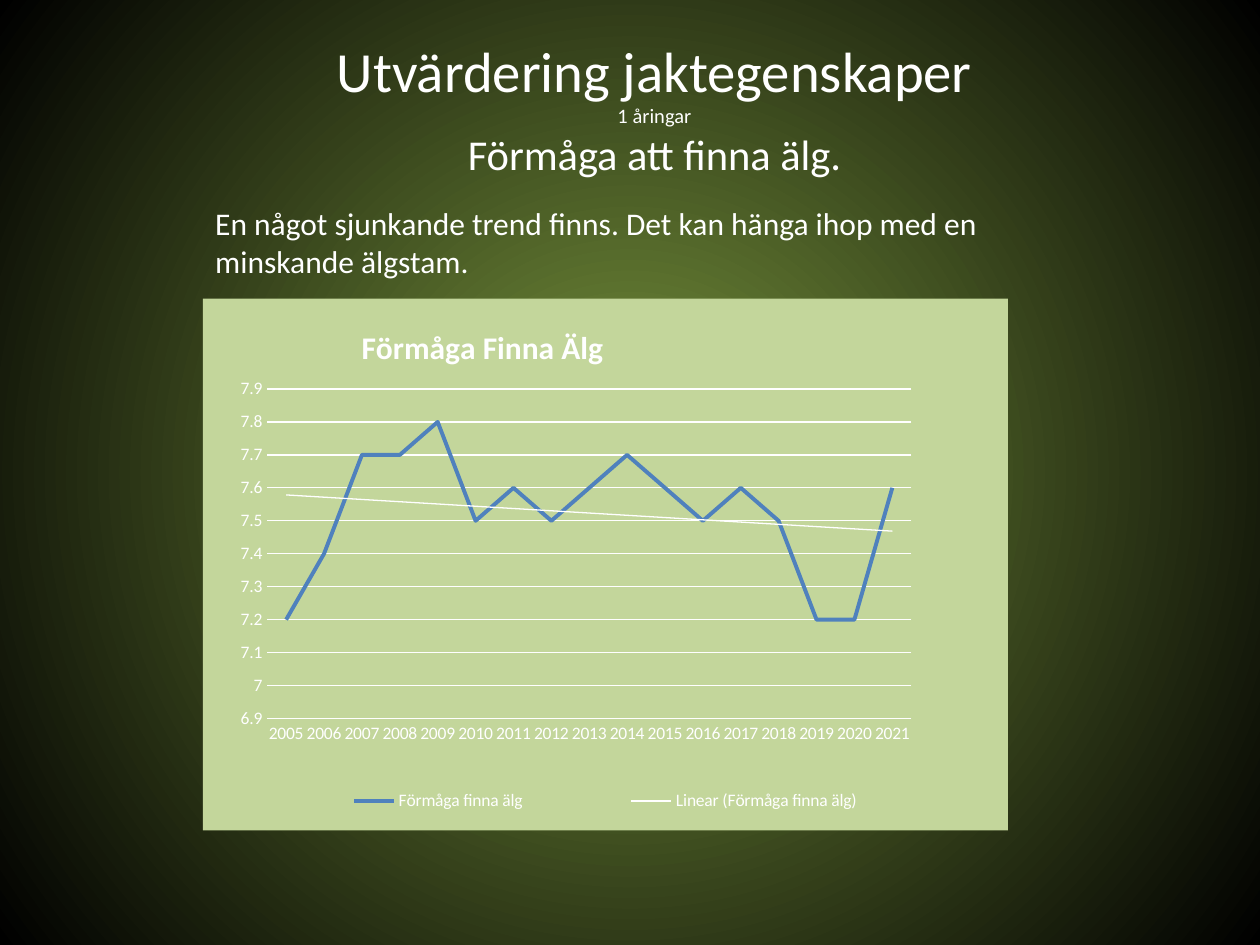
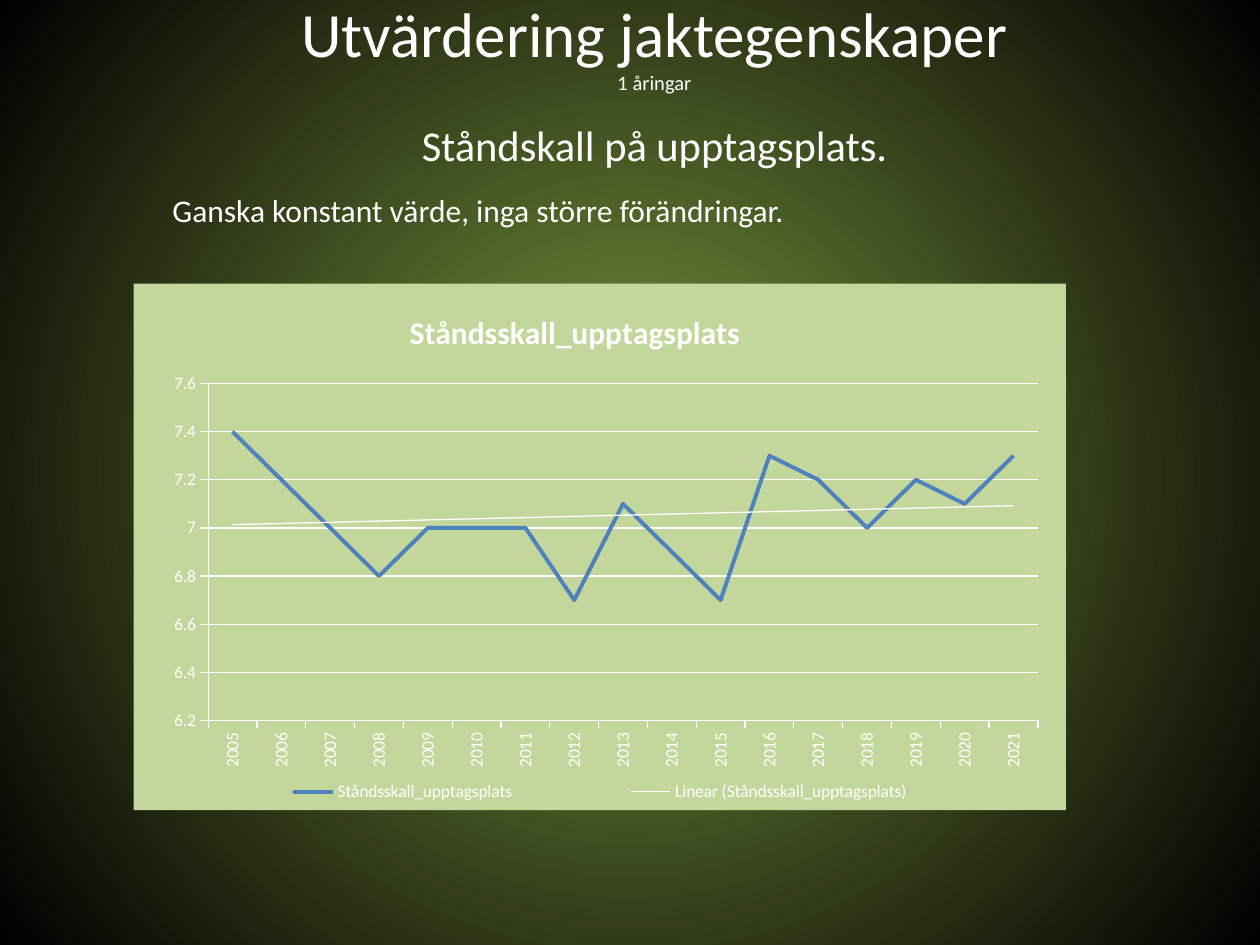
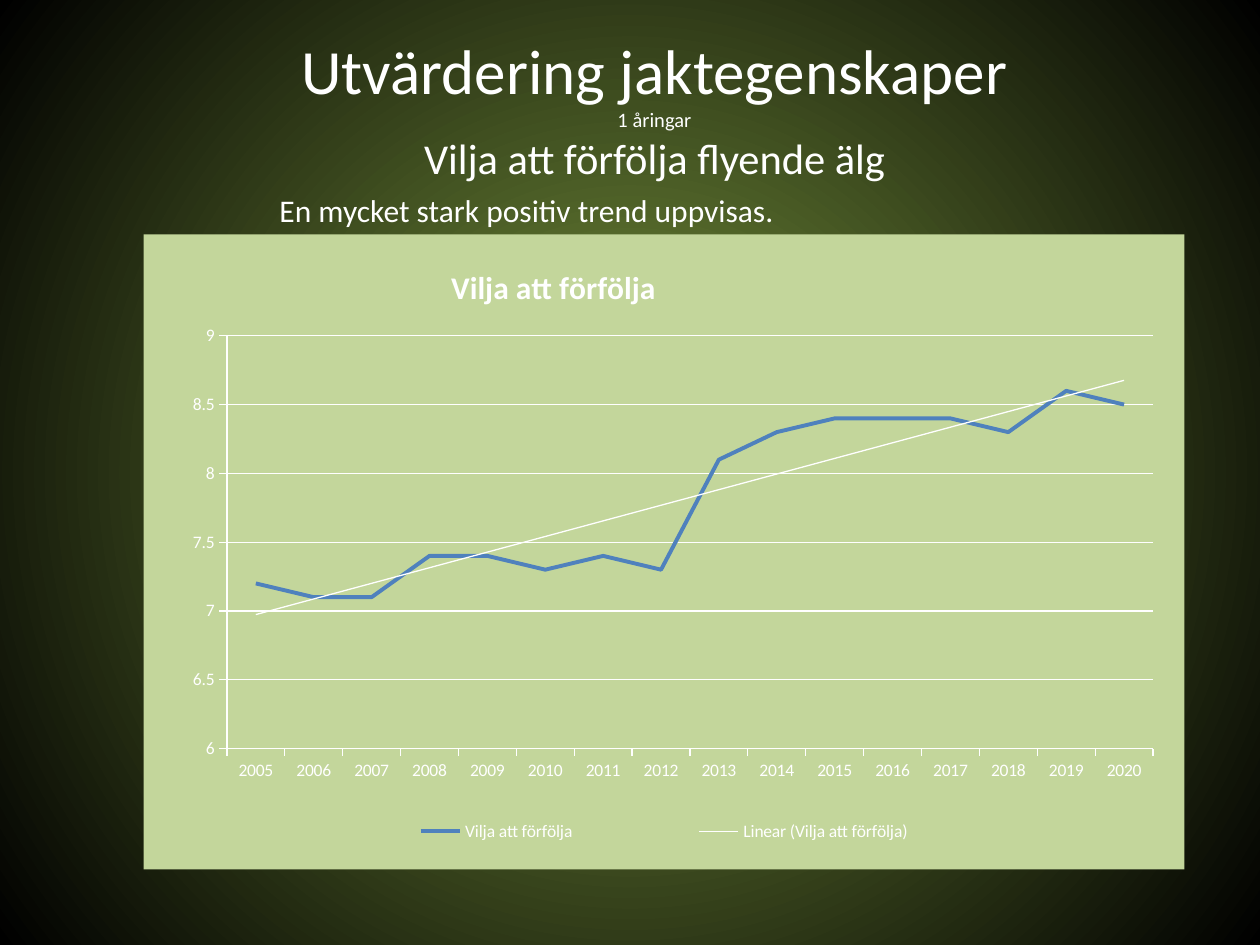
from lxml.etree import SubElement
from pptx import Presentation
from pptx.chart.data import CategoryChartData
from pptx.dml.color import RGBColor
from pptx.enum.chart import XL_CHART_TYPE, XL_LEGEND_POSITION, XL_MARKER_STYLE, XL_TICK_MARK
from pptx.enum.text import MSO_ANCHOR, PP_ALIGN
from pptx.oxml import parse_xml
from pptx.oxml.ns import nsdecls, qn
from pptx.util import Inches, Pt

COLORS = {
    "glow": "77933C",
    "edge": "000000",
    "text": "FFFFFF",
    "panel": "C3D69B",
    "score": "4F81BD",
}
FONT = "Calibri"
HEADING = "Utvärdering jaktegenskaper"
AGE_GROUP = "1 åringar"
FIRST_YEAR = 2005

TRAITS = [
    dict(
        trait="Förmåga att finna älg.", heading_size=32.4, heading_top=0.24, gap=0,
        comment="En något sjunkande trend finns. Det kan hänga ihop med en minskande älgstam.",
        comment_box=(1.61, 1.57, 7.4, 0.71),
        chart=dict(
            box=(1.61, 2.37, 6.39, 4.22), title="Förmåga Finna Älg", series="Förmåga finna älg",
            scores=[7.2, 7.4, 7.7, 7.7, 7.8, 7.5, 7.6, 7.5, 7.6, 7.7, 7.6, 7.5, 7.6, 7.5, 7.2, 7.2, 7.6],
            scale=(6.9, 7.9, 0.1), ticks=XL_TICK_MARK.NONE, axis_line=False, rotation=0,
            plot_area=(0.08, 0.17, 0.8, 0.62), title_at=(0.19, 0.04),
            legend_area=(0.06, 0.9, 0.88, 0.09),
        ),
    ),
    dict(
        trait="Ståndskall på upptagsplats.", heading_size=36, heading_top=0.04, gap=14,
        comment="Ganska konstant värde, inga större förändringar.",
        comment_box=(1.27, 1.47, 8.49, 0.4),
        chart=dict(
            box=(1.06, 2.25, 7.4, 4.18), title="Ståndsskall_upptagsplats", series="Ståndsskall_upptagsplats",
            scores=[7.4, 7.2, 7, 6.8, 7, 7, 7, 6.7, 7.1, 6.9, 6.7, 7.3, 7.2, 7, 7.2, 7.1, 7.3],
            scale=(6.2, 7.6, 0.2), ticks=XL_TICK_MARK.OUTSIDE, axis_line=True, rotation=-90,
            plot_area=(0.08, 0.19, 0.89, 0.64), title_at=(0.29, 0.04),
            legend_area=(0.05, 0.93, 0.9, 0.07),
        ),
    ),
    dict(
        trait="Vilja att förfölja flyende älg", heading_size=36, heading_top=0.24, gap=0,
        comment="En mycket stark positiv trend uppvisas.",
        comment_box=(2.12, 1.47, 7.64, 0.4),
        chart=dict(
            box=(1.14, 1.86, 8.26, 5.04), title="Vilja att förfölja", series="Vilja att förfölja",
            scores=[7.2, 7.1, 7.1, 7.4, 7.4, 7.3, 7.4, 7.3, 8.1, 8.3, 8.4, 8.4, 8.4, 8.3, 8.6, 8.5],
            scale=(6, 9, 0.5), ticks=XL_TICK_MARK.OUTSIDE, axis_line=True, rotation=0,
            plot_area=(0.08, 0.16, 0.89, 0.65), title_at=(0.29, 0.04),
            legend_area=(0.15, 0.9, 0.7, 0.08),
        ),
    ),
]


def color(key):
    return RGBColor.from_string(COLORS[key])


def style_font(font, size, bold=False):
    font.name = FONT
    font.size = Pt(size)
    font.bold = bold
    font.color.rgb = color("text")


def write(paragraph, text, size=18, bold=False, align=PP_ALIGN.LEFT, space_before=0):
    paragraph.alignment = align
    paragraph.space_before = Pt(space_before)
    run = paragraph.add_run()
    run.text = text
    style_font(run.font, size, bold)


def add_frame(slide, box, anchor=MSO_ANCHOR.TOP):
    frame = slide.shapes.add_textbox(*map(Inches, box)).text_frame
    frame.word_wrap = True
    frame.vertical_anchor = anchor
    return frame


def add_heading(slide, trait, size, top, gap):
    frame = add_frame(slide, (1.86, top, 6.67, 1.22), MSO_ANCHOR.MIDDLE)
    write(frame.paragraphs[0], HEADING, size=size, align=PP_ALIGN.CENTER)
    write(frame.add_paragraph(), AGE_GROUP, size=11.7, align=PP_ALIGN.CENTER)
    write(frame.add_paragraph(), trait, size=24.3, align=PP_ALIGN.CENTER, space_before=gap)


def paint_background(master):
    fill = master.background.fill
    fill.gradient()
    for stop, key in zip(fill.gradient_stops, ("glow", "edge")):
        stop.color.rgb = color(key)
    gradient = master.element.find(".//" + qn("a:gradFill"))
    gradient.remove(gradient.find(qn("a:lin")))
    circle = SubElement(gradient, qn("a:path"), {"path": "circle"})
    SubElement(circle, qn("a:fillToRect"), dict.fromkeys("ltrb", "50000"))


def panel_fill():
    return parse_xml(
        f'<c:spPr {nsdecls("c", "a")}><a:solidFill><a:srgbClr val="{COLORS["panel"]}"/>'
        "</a:solidFill><a:ln><a:noFill/></a:ln></c:spPr>"
    )


def place(part, area, after=None, inner=False):
    for old in part.findall(qn("c:layout")):
        part.remove(old)
    layout = parse_xml(f'<c:layout {nsdecls("c")}><c:manualLayout/></c:layout>')
    settings = [("layoutTarget", "inner")] if inner else []
    settings += [("xMode", "edge"), ("yMode", "edge"), *zip("xywh", area)]
    for tag, value in settings:
        SubElement(layout[0], qn(f"c:{tag}"), val=str(value))
    if after:
        part.find(qn(after)).addnext(layout)
    else:
        part.insert(0, layout)


def add_trend(series_element):
    series_element.find(qn("c:cat")).addprevious(parse_xml(
        f'<c:trendline {nsdecls("c", "a")}><c:spPr><a:ln w="9525"><a:solidFill>'
        f'<a:srgbClr val="{COLORS["text"]}"/></a:solidFill></a:ln></c:spPr>'
        '<c:trendlineType val="linear"/><c:dispRSqr val="0"/><c:dispEq val="0"/></c:trendline>'
    ))


def style_line(line, key, width):
    line.color.rgb = color(key)
    line.width = Pt(width)


def style_axis(axis, ticks):
    axis.major_tick_mark = ticks
    axis.minor_tick_mark = XL_TICK_MARK.NONE
    style_font(axis.tick_labels.font, 10)
    style_line(axis.format.line, "text", 0.75)


def add_score_chart(slide, box, title, series, scores, scale, ticks, axis_line, rotation,
                    plot_area, title_at, legend_area):
    data = CategoryChartData(number_format="General")
    data.categories = [str(FIRST_YEAR + offset) for offset in range(len(scores))]
    data.add_series(series, scores)
    chart = slide.shapes.add_chart(XL_CHART_TYPE.LINE, *map(Inches, box), data).chart
    style_font(chart.font, 10)

    chart.has_title = True
    write(chart.chart_title.text_frame.paragraphs[0], title, bold=True, align=PP_ALIGN.CENTER)
    chart.has_legend = True
    chart.legend.position = XL_LEGEND_POSITION.RIGHT
    chart.legend.include_in_layout = False
    style_font(chart.legend.font, 10)

    years, values = chart.category_axis, chart.value_axis
    style_axis(years, ticks)
    style_axis(values, ticks)
    values.minimum_scale, values.maximum_scale, values.major_unit = scale
    values.has_major_gridlines = True
    style_line(values.major_gridlines.format.line, "text", 0.75)
    if not axis_line:
        values.format.line.fill.background()

    plot = chart.plots[0]
    plot.vary_by_categories = False
    score_line = plot.series[0]
    score_line.smooth = False
    score_line.marker.style = XL_MARKER_STYLE.NONE
    style_line(score_line.format.line, "score", 2.25)

    root = chart.element
    plot_element = root.find(".//" + qn("c:plotArea"))
    add_trend(root.find(".//" + qn("c:ser")))
    label_body = plot_element.find(f'{qn("c:catAx")}/{qn("c:txPr")}/{qn("a:bodyPr")}')
    label_body.set("rot", str(rotation * 60000))
    place(plot_element, plot_area, inner=True)
    place(root.find(".//" + qn("c:title")), title_at, after="c:tx")
    place(root.find(".//" + qn("c:legend")), legend_area, after="c:legendPos")
    plot_element.append(panel_fill())
    root.find(qn("c:chart")).addnext(panel_fill())


def main():
    prs = Presentation()
    prs.slide_width, prs.slide_height = Inches(10), Inches(7.5)
    paint_background(prs.slide_master)
    for page in TRAITS:
        slide = prs.slides.add_slide(prs.slide_layouts[6])
        add_heading(slide, page["trait"], page["heading_size"], page["heading_top"], page["gap"])
        write(add_frame(slide, page["comment_box"]).paragraphs[0], page["comment"])
        add_score_chart(slide, **page["chart"])
    prs.save("out.pptx")


if __name__ == "__main__":
    main()
